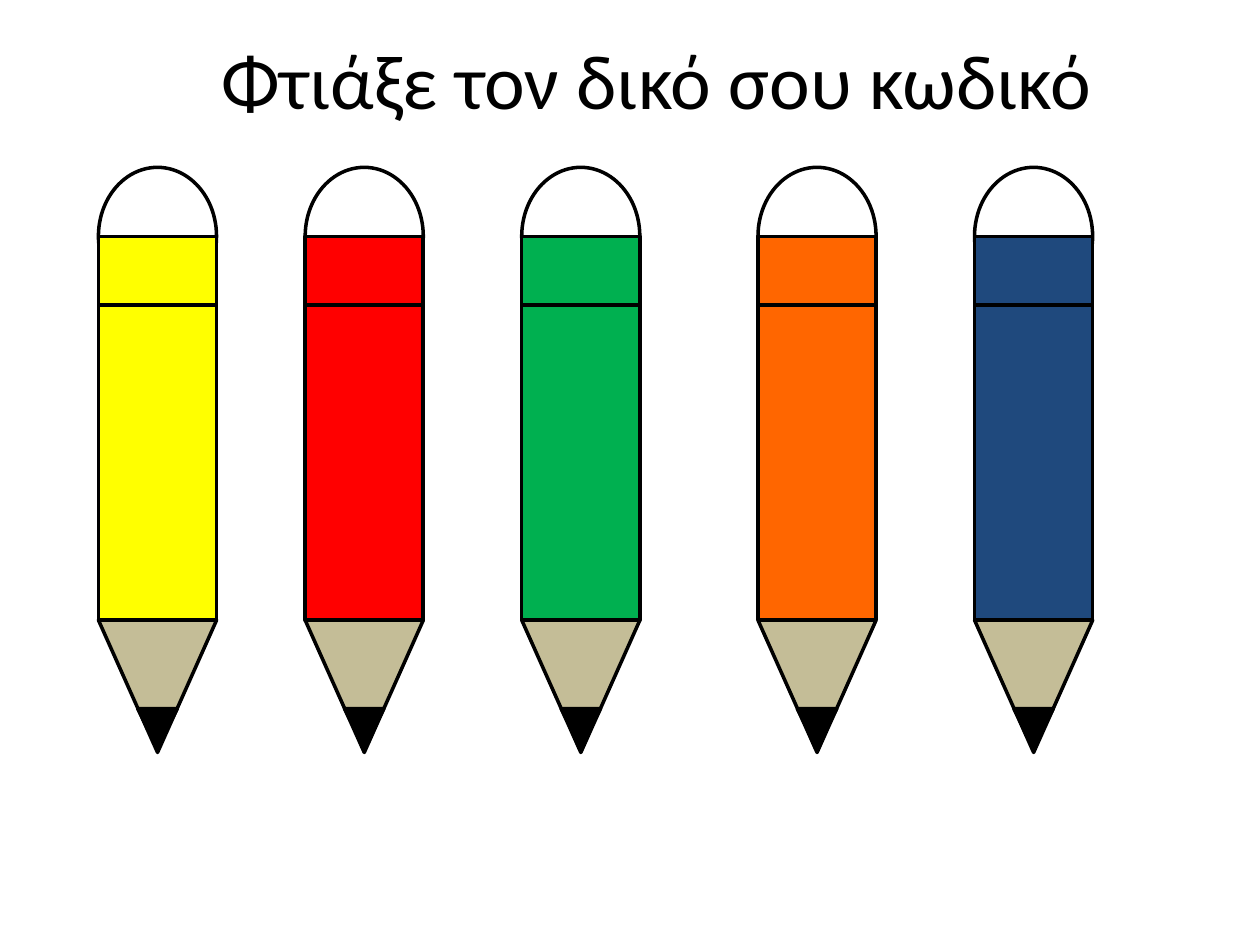
from dataclasses import dataclass

from pptx import Presentation
from pptx.dml.color import RGBColor as Rgb
from pptx.enum import shapes, text
from pptx.util import Pt

Kind = shapes.MSO_SHAPE


@dataclass(frozen=True)
class Theme:
    ink: str = "000000"
    white: str = "FFFFFF"
    wood: str = "C4BD97"
    font: str = "Calibri"
    title: float = 44
    line: float = 2


@dataclass(frozen=True)
class Part:
    kind: Kind
    dx: float
    top: float
    width: float
    height: float
    fill: str | None = None  # None takes the pencil's own colour
    turn: float = 0


@dataclass(frozen=True)
class Pencil:
    left: float
    paint: str


THEME = Theme()
WIDTH = 67.5

# Parts of one pencil, from back to front
PARTS = (
    Part(Kind.OVAL, 0, 95.63, WIDTH, 78.75, THEME.white),
    Part(Kind.RECTANGLE, 0, 135, WIDTH, 61.88),
    Part(Kind.RECTANGLE, 0, 174.38, WIDTH, 180),
    Part(Kind.ISOSCELES_TRIANGLE, 0, 354.38, WIDTH, 75.6, THEME.wood, 180),
    Part(Kind.ISOSCELES_TRIANGLE, 22.5, 405, 22.5, 22.5, THEME.ink, 180),
)

PENCILS = (
    Pencil(56.25, "FFFF00"),
    Pencil(174.38, "FF0000"),
    Pencil(298.13, "00B050"),
    Pencil(433.13, "FF6600"),
    Pencil(556.88, "1F497D"),
)


def draw_part(slide, pencil: Pencil, part: Part) -> None:
    shape = slide.shapes.add_shape(
        part.kind, Pt(pencil.left + part.dx), Pt(part.top),
        Pt(part.width), Pt(part.height))
    shape.rotation = part.turn
    shape.shadow.inherit = False
    shape.fill.solid()
    shape.fill.fore_color.rgb = Rgb.from_string(part.fill or pencil.paint)
    shape.line.color.rgb = Rgb.from_string(THEME.ink)
    shape.line.width = Pt(THEME.line)


def draw_title(slide, words: str) -> None:
    box = slide.shapes.add_textbox(Pt(56.25), Pt(0), Pt(648), Pt(90))
    frame = box.text_frame
    frame.word_wrap = True
    frame.vertical_anchor = text.MSO_ANCHOR.MIDDLE
    frame.text = words
    line = frame.paragraphs[0]
    line.alignment = text.PP_ALIGN.CENTER
    font = line.runs[0].font
    font.name = THEME.font
    font.size = Pt(THEME.title)
    font.color.rgb = Rgb.from_string(THEME.ink)


def main() -> None:
    deck = Presentation()
    deck.slide_width, deck.slide_height = Pt(720), Pt(540)
    slide = deck.slides.add_slide(deck.slide_layouts[6])

    # Heading
    draw_title(slide, "Φτιάξε τον δικό σου κωδικό ")

    # Row of pencils
    for pencil in PENCILS:
        for part in PARTS:
            draw_part(slide, pencil, part)

    deck.save("out.pptx")


if __name__ == "__main__":
    main()
